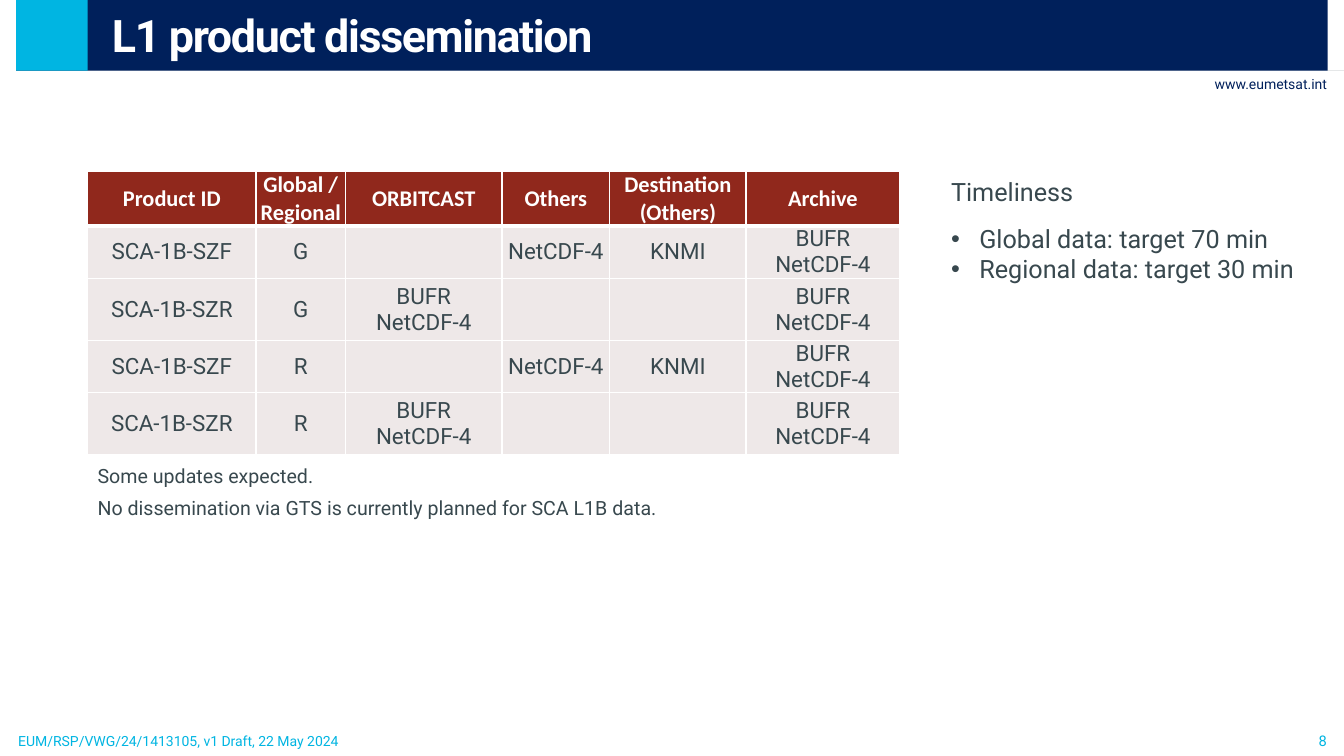
from dataclasses import dataclass

from lxml import etree
from pptx import Presentation
from pptx.dml.color import RGBColor
from pptx.enum.shapes import MSO_CONNECTOR, MSO_SHAPE
from pptx.enum.text import MSO_ANCHOR, MSO_AUTO_SIZE, PP_ALIGN
from pptx.oxml.ns import qn
from pptx.util import Cm, Pt

LEFT, CENTER, RIGHT = PP_ALIGN.LEFT, PP_ALIGN.CENTER, PP_ALIGN.RIGHT
MIDDLE = MSO_ANCHOR.MIDDLE
NO_FIT, GROW = MSO_AUTO_SIZE.NONE, MSO_AUTO_SIZE.SHAPE_TO_FIT_TEXT
RECT = MSO_SHAPE.RECTANGLE
STRAIGHT = MSO_CONNECTOR.STRAIGHT


@dataclass(frozen=True)
class Theme:
    """Colours, fonts and type sizes of the slide."""
    navy: str = "00205B"
    cyan: str = "00B5E2"
    ink: str = "38484E"
    white: str = "FFFFFF"
    header: str = "90281C"
    row: str = "EEE8E8"
    font: str = "Roboto"
    header_font: str = "Calibri"
    title_size: float = 32
    body_size: float = 18
    table_size: float = 16
    note_size: float = 14
    page_size: float = 10.5
    small_size: float = 10


T = Theme()

COLUMN_WIDTHS = (4.24, 2.26, 3.94, 2.72, 3.43, 3.88)
ROW_HEIGHTS = (1.09, 1.07, 1.57, 1.07, 1.57)
HEADERS = ("Product ID", "Global / Regional", "ORBITCAST", "Others",
           "Destination\n(Others)", "Archive")
BOTH = "BUFR\vNetCDF-4"
PRODUCTS = [row for area in "GR" for row in (
    ("SCA-1B-SZF", area, "", "NetCDF-4", "KNMI", BOTH),
    ("SCA-1B-SZR", area, BOTH, "", "", BOTH))]


def rgb(value):
    """Return the colour for a hex string."""
    return RGBColor.from_string(value)


def style(font, size, color, name=T.font, bold=False):
    """Set the size, colour, typeface and weight of a font."""
    font.size, font.name, font.bold = Pt(size), name, bold
    font.color.rgb = rgb(color)


def write(p, text, size, color, align=LEFT, name=T.font, bold=False):
    """Add text to a paragraph run by run, breaking lines at vertical tabs."""
    p.alignment = align
    for i, line in enumerate(text.split("\v")):
        if i:
            p.add_line_break()
        r = p.add_run()
        r.text = line
        style(r.font, size, color, name, bold)


def paragraphs(tf, count):
    """Return the first paragraph of a frame followed by new ones."""
    return [tf.paragraphs[0]] + [tf.add_paragraph() for _ in range(count - 1)]


def set_indent(p, left, first=0, bullet=None):
    """Indent a paragraph and give it an optional bullet."""
    pPr = p._p.get_or_add_pPr()
    pPr.set("marL", str(Cm(left)))
    pPr.set("indent", str(Cm(first)))
    if bullet:
        etree.SubElement(pPr, qn("a:buFont")).set("typeface", "Arial")
        etree.SubElement(pPr, qn("a:buChar")).set("char", bullet)


def set_margins(tf, left=0, other=0):
    """Set the insets of a text frame or table cell."""
    tf.margin_left = Cm(left)
    tf.margin_top = tf.margin_right = tf.margin_bottom = Cm(other)


def add_text_box(s, box, wrap=True, fit=NO_FIT):
    """Add an empty text box and return its frame."""
    tf = s.shapes.add_textbox(*map(Cm, box)).text_frame
    tf.word_wrap, tf.auto_size = wrap, fit
    return tf


def add_bar(s, box, color):
    """Add a plain filled rectangle."""
    sp = s.shapes.add_shape(RECT, *map(Cm, box))
    sp.shadow.inherit = False
    sp.fill.solid()
    sp.fill.fore_color.rgb = rgb(color)
    sp.line.fill.background()


def add_banner(s, box, title):
    """Place the banner, its rule, its accent square and the title."""
    x, y, w, h = box
    rule = s.shapes.add_connector(STRAIGHT, Cm(x), Cm(y + h), Cm(33.87), Cm(y + h))
    rule.line.width = Pt(0.5)
    rule.line.color.rgb = rgb(T.ink)
    color = rule.line._ln.find(".//" + qn("a:srgbClr"))
    etree.SubElement(color, qn("a:alpha")).set("val", "20000")
    etree.SubElement(rule._element.spPr, qn("a:effectLst"))
    add_bar(s, box, T.navy)
    add_bar(s, (x, y, h, h), T.cyan)

    sp = s.shapes.title
    s.shapes._spTree.append(sp._element)
    sp.left, sp.top, sp.width, sp.height = map(Cm, (x + h, y, 31.67, h))
    tf = sp.text_frame
    tf.word_wrap, tf.auto_size, tf.vertical_anchor = True, NO_FIT, MIDDLE
    set_margins(tf, other=0.1)
    p = tf.paragraphs[0]
    set_indent(p, 0.61)
    write(p, title, T.title_size, T.white, bold=True)
    p.runs[0].font._element.set("spc", "-100")


def add_margin_texts(s, right):
    """Place the web address, the document reference and the page number."""
    tf = add_text_box(s, (right - 3.4, 1.78, 3.4, 0.69), wrap=False, fit=GROW)
    write(tf.paragraphs[0], "www.eumetsat.int", T.small_size, T.navy, RIGHT)
    tf = add_text_box(s, (0.46, 18.47, 12.85, 0.43), fit=GROW)
    set_margins(tf)
    write(tf.paragraphs[0], "EUM/RSP/VWG/24/1413105, v1 Draft, 22 May 2024",
          T.small_size, T.cyan)
    tf = add_text_box(s, (right - 1.7, 18.31, 1.7, 0.74), fit=GROW)
    write(tf.paragraphs[0], "8", T.page_size, T.cyan, RIGHT)


def set_borders(cell, top, bottom):
    """Draw white borders around a cell, with widths in points."""
    tcPr = cell._tc.get_or_add_tcPr()
    for i, (side, width) in enumerate((("L", 1), ("R", 1), ("T", top), ("B", bottom))):
        ln = etree.Element(qn("a:ln" + side), w=str(Pt(width)))
        fill = etree.SubElement(ln, qn("a:solidFill"))
        etree.SubElement(fill, qn("a:srgbClr")).set("val", T.white)
        tcPr.insert(i, ln)


def add_product_table(s, box):
    """Place the table of products and their dissemination channels."""
    rows = [HEADERS, *PRODUCTS]
    table = s.shapes.add_table(len(rows), len(HEADERS), *map(Cm, box)).table
    table.horz_banding = False
    for column, width in zip(table.columns, COLUMN_WIDTHS):
        column.width = Cm(width)
    for i, (row, height, texts) in enumerate(zip(table.rows, ROW_HEIGHTS, rows)):
        row.height = Cm(height)
        head = i == 0
        color, name = (T.white, T.header_font) if head else (T.ink, T.font)
        for cell, text in zip(row.cells, texts):
            cell.fill.solid()
            cell.fill.fore_color.rgb = rgb(T.header if head else T.row)
            set_borders(cell, 3 if i == 1 else 1, 3 if head else 1)
            set_margins(cell)
            cell.vertical_anchor = MIDDLE
            if text:
                lines = text.split("\n")
                for p, line in zip(paragraphs(cell.text_frame, len(lines)), lines):
                    write(p, line, T.table_size, color, CENTER, name, head)


def add_timeliness(s, box):
    """Place the timeliness heading and its bullets."""
    items = ("Global data: target 70 min", "Regional data: target 30 min")
    heading, *bullets = paragraphs(add_text_box(s, box), len(items) + 1)
    heading.space_after = Pt(12)
    write(heading, "Timeliness", T.body_size, T.ink)
    for p, item in zip(bullets, items):
        set_indent(p, 0.71, -0.71, "•")
        write(p, item, T.body_size, T.ink)


def add_notes_below(s, box):
    """Place the remarks under the table."""
    remarks = ("Some updates expected.",
               "No dissemination via GTS is currently planned for SCA L1B data.")
    for p, remark in zip(paragraphs(add_text_box(s, box), len(remarks)), remarks):
        p.space_after = Pt(6)
        write(p, remark, T.note_size, T.ink)


def main():
    """Build the slide and save it."""
    prs = Presentation()
    prs.slide_width, prs.slide_height = Cm(33.87), Cm(19.05)
    s = prs.slides.add_slide(prs.slide_layouts[5])
    left, top, height = 2.21, 4.32, 7.24
    add_margin_texts(s, 33.69)
    add_banner(s, (0.41, -0.02, 33.05, 1.8), "L1 product dissemination")
    add_timeliness(s, (23.72, top, 9.37, height))
    add_product_table(s, (left, top, sum(COLUMN_WIDTHS), sum(ROW_HEIGHTS)))
    add_notes_below(s, (left, top + height, 16.87, 1.96))
    prs.save("out.pptx")


if __name__ == "__main__":
    main()
